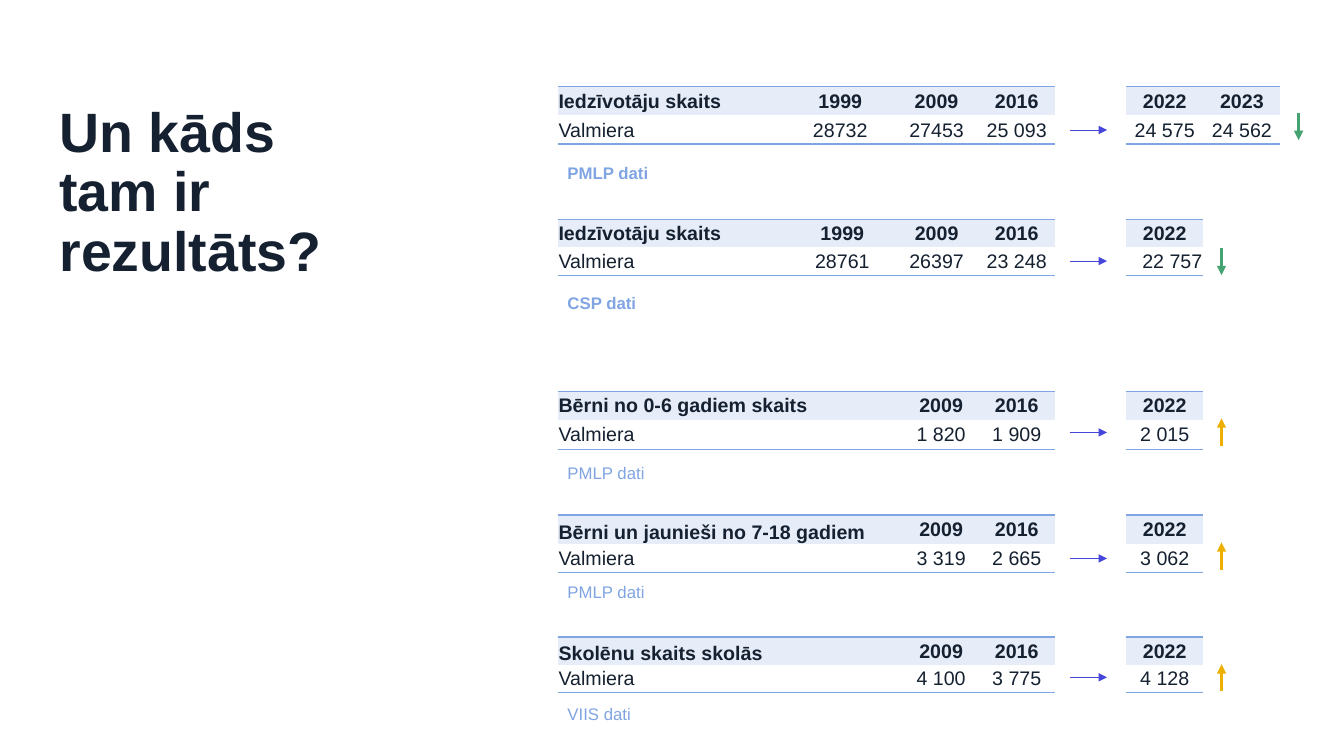
from dataclasses import dataclass

from lxml.etree import SubElement
from pptx import Presentation
from pptx.dml.color import RGBColor
from pptx.enum.shapes import MSO_CONNECTOR
from pptx.enum.text import MSO_ANCHOR, MSO_AUTO_SIZE, PP_ALIGN
from pptx.oxml import parse_xml
from pptx.oxml.ns import nsdecls, qn
from pptx.util import Inches, Pt

FONT = "Arial"
INK, BLUE, PALE = "152030", "81A5E3", "E6EDF9"
INDIGO, GREEN, YELLOW = "4646DB", "45A372", "EDB000"
NO_STYLE = "{2D5ABB26-0587-4C30-8999-92F81FD0307C}"
LEFT, RIGHT, YEAR_WIDTH = 5.53, 11.17, 0.765


@dataclass
class Indicator:
    top: float
    row_height: float
    widths: list[float]
    past: list[list[str]]
    recent: list[list[str]]
    source: str
    source_top: float
    arrow_y: float
    trend_top: float
    rising: bool = True
    source_bold: bool = False
    head_anchor: MSO_ANCHOR = MSO_ANCHOR.MIDDLE
    recent_align: PP_ALIGN = PP_ALIGN.CENTER


INDICATORS = [
    Indicator(0.86, 0.285, [2.27, 1.07, 0.84, 0.75],
              [["Iedzīvotāju skaits", "1999", "2009", "2016"],
               ["Valmiera", "28732", "27453", "25 093"]],
              [["2022", "2023"], ["24 575", "24 562"]],
              "PMLP dati", 1.57, 1.29, 1.12, rising=False, source_bold=True),
    Indicator(2.18, 0.275, [2.31, 1.03, 0.84, 0.75],
              [["Iedzīvotāju skaits", "1999", "2009", "2016"],
               ["Valmiera", "28761", "26397", "23 248"]],
              [["2022"], ["22 757"]],
              "CSP dati", 2.86, 2.59, 2.46, rising=False, source_bold=True,
              recent_align=PP_ALIGN.RIGHT),
    Indicator(3.88, 0.288, [2.69, 0.74, 0.75, 0.75],
              [["Bērni no 0-6 gadiem skaits", "", "2009", "2016"],
               ["Valmiera", "", "1 820", "1 909"]],
              [["2022"], ["2 015"]],
              "PMLP dati", 4.54, 4.29, 4.15),
    Indicator(5.11, 0.285, [3.33, 0.1, 0.75, 0.75],
              [["Bērni un jaunieši no 7-18 gadiem", "", "2009", "2016"],
               ["Valmiera", "", "3 319", "2 665"]],
              [["2022"], ["3 062"]],
              "PMLP dati", 5.72, 5.54, 5.38, head_anchor=MSO_ANCHOR.BOTTOM),
    Indicator(6.32, 0.275, [2.69, 0.74, 0.75, 0.75],
              [["Skolēnu skaits skolās", "", "2009", "2016"],
               ["Valmiera", "", "4 100", "3 775"]],
              [["2022"], ["4 128"]],
              "VIIS dati", 6.93, 6.72, 6.59, head_anchor=MSO_ANCHOR.BOTTOM),
]


def rgb(value: str) -> RGBColor:
    return RGBColor.from_string(value)


def set_font(p, size: float, color: str, bold: bool) -> None:
    p.font.name = FONT
    p.font.size = Pt(size)
    p.font.bold = bold
    p.font.color.rgb = rgb(color)


def add_border(cell, side: str) -> None:
    cell._tc.get_or_add_tcPr().insert(0, parse_xml(
        f'<a:{side} {nsdecls("a")} w="12700"><a:solidFill>'
        f'<a:srgbClr val="{BLUE}"/></a:solidFill></a:{side}>'))


def add_grid(s, x: float, y: float, widths: list[float], row_height: float,
             rows: list[list[str]]):
    frame = s.shapes.add_table(len(rows), len(widths), Inches(x), Inches(y),
                               Inches(sum(widths)), Inches(row_height * len(rows)))
    table = frame.table
    table.first_row = table.horz_banding = False
    table._tbl.tblPr.find(qn("a:tableStyleId")).text = NO_STYLE
    for column, width in zip(table.columns, widths):
        column.width = Inches(width)
    for i, texts in enumerate(rows):
        table.rows[i].height = Inches(row_height)
        for j, text in enumerate(texts):
            cell = table.cell(i, j)
            cell.margin_left = cell.margin_right = cell.margin_top = Inches(0.01)
            cell.margin_bottom = 0
            cell.vertical_anchor = MSO_ANCHOR.MIDDLE
            if i == 0:
                cell.fill.solid()
                cell.fill.fore_color.rgb = rgb(PALE)
            else:
                cell.fill.background()
            add_border(cell, "lnT" if i == 0 else "lnB")
            p = cell.text_frame.paragraphs[0]
            p.text = text
            p.alignment = PP_ALIGN.CENTER
            set_font(p, 14, INK, i == 0)
    return table


def add_arrow(s, x1: float, y1: float, x2: float, y2: float,
              color: str, width: float) -> None:
    c = s.shapes.add_connector(MSO_CONNECTOR.STRAIGHT, Inches(x1), Inches(y1),
                               Inches(x2), Inches(y2))
    c.line.color.rgb = rgb(color)
    c.line.width = Pt(width)
    SubElement(c.line._get_or_add_ln(), qn("a:tailEnd"), type="triangle")
    SubElement(c._element.spPr, qn("a:effectLst"))


def add_source(s, item: Indicator) -> None:
    sp = s.shapes.add_textbox(Inches(LEFT), Inches(item.source_top),
                              Inches(1.26), Inches(0.3))
    tf = sp.text_frame
    tf.word_wrap = True
    tf.auto_size = MSO_AUTO_SIZE.SHAPE_TO_FIT_TEXT
    p = tf.paragraphs[0]
    p.text = item.source
    set_font(p, 12, BLUE, item.source_bold)


def add_indicator(s, item: Indicator) -> None:
    past = add_grid(s, LEFT, item.top, item.widths, item.row_height, item.past)
    past.cell(0, 0).vertical_anchor = item.head_anchor
    for row in range(2):
        past.cell(row, 0).text_frame.paragraphs[0].alignment = PP_ALIGN.LEFT
    add_source(s, item)

    years = len(item.recent[0])
    recent = add_grid(s, RIGHT, item.top, [YEAR_WIDTH] * years,
                      item.row_height, item.recent)
    recent.cell(1, 0).text_frame.paragraphs[0].alignment = item.recent_align
    add_arrow(s, 10.61, item.arrow_y, 10.98, item.arrow_y, INDIGO, 0.5)

    x = RIGHT + YEAR_WIDTH * years + 0.18
    top, bottom = item.trend_top, item.trend_top + 0.27
    if item.rising:
        add_arrow(s, x, bottom, x, top, YELLOW, 2.25)
    else:
        add_arrow(s, x, top, x, bottom, GREEN, 2.25)


def add_title(s, text: str) -> None:
    sp = s.shapes.title
    sp.left, sp.top = Inches(0.49), Inches(0.86)
    sp.width, sp.height = Inches(2.93), Inches(2.13)
    tf = sp.text_frame
    tf.word_wrap = True
    tf.auto_size = MSO_AUTO_SIZE.NONE
    tf.vertical_anchor = MSO_ANCHOR.MIDDLE
    p = tf.paragraphs[0]
    p.text = text
    p.alignment = PP_ALIGN.LEFT
    p.line_spacing = 0.9
    set_font(p, 39.6, INK, True)


def main() -> None:
    prs = Presentation()
    prs.slide_width, prs.slide_height = Inches(13.33), Inches(7.5)
    s = prs.slides.add_slide(prs.slide_layouts[5])
    add_title(s, "Un kāds tam ir rezultāts?")
    for item in INDICATORS:
        add_indicator(s, item)
    prs.save("out.pptx")


if __name__ == "__main__":
    main()
